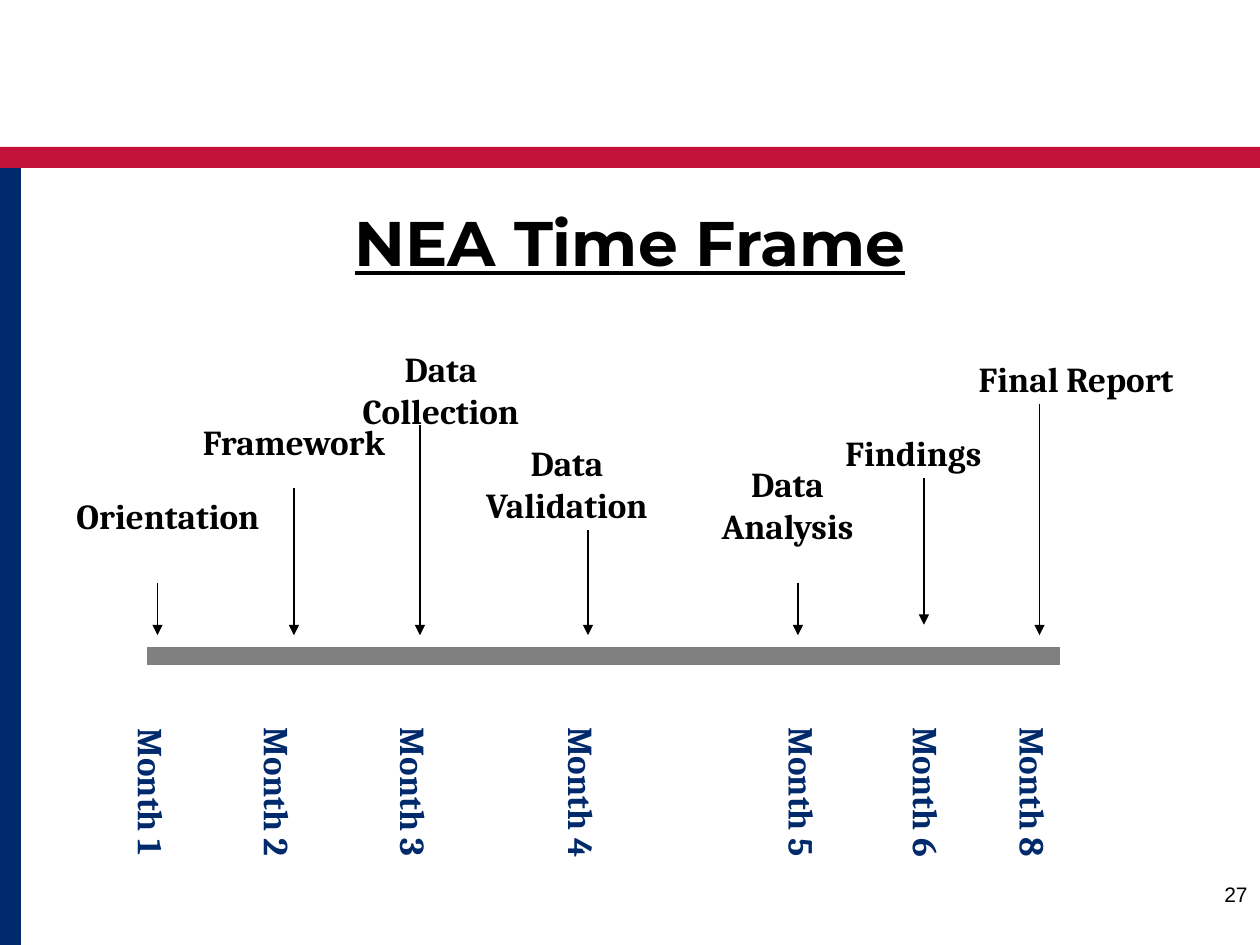
import pptx
import pptx.util
import pptx.dml.color
import pptx.enum.shapes
import pptx.enum.text
import pptx.oxml.ns
from lxml import etree

Pt = pptx.util.Pt
RGB = pptx.dml.color.RGBColor.from_string
ALIGN = pptx.enum.text.PP_ALIGN
COLORS = {"red": "C2113A", "navy": "002A6C", "gray": "808080", "black": "000000"}

deck = pptx.Presentation()
deck.slide_width, deck.slide_height = Pt(720), Pt(540)
slide = deck.slides.add_slide(deck.slide_layouts[5])
shapes = slide.shapes


def write(box, text, size, face, color="black", bold=True, align=ALIGN.CENTER):
    """Fill a text shape with one formatted paragraph."""
    frame = box.text_frame
    frame.word_wrap = True
    frame.text = text
    para = frame.paragraphs[0]
    para.alignment = align
    font = para.runs[0].font
    font.size, font.name, font.bold = Pt(size), face, bold
    font.color.rgb = RGB(COLORS[color])
    return font


def rule(x1, y1, x2, y2, width, color):
    """Draw a straight line without a shadow and return its a:ln element."""
    line = shapes.add_connector(
        pptx.enum.shapes.MSO_CONNECTOR.STRAIGHT, Pt(x1), Pt(y1), Pt(x2), Pt(y2))
    line.line.width = Pt(width)
    line.line.color.rgb = RGB(COLORS[color])
    props = line._element.spPr
    etree.SubElement(props, pptx.oxml.ns.qn("a:effectLst"))
    return props.find(pptx.oxml.ns.qn("a:ln"))


# Page bands
for x, y, w, h, color in [(0, 84, 720, 12, "red"), (0, 96, 12, 444, "navy")]:
    band = shapes.add_shape(
        pptx.enum.shapes.MSO_SHAPE.RECTANGLE, Pt(x), Pt(y), Pt(w), Pt(h))
    band.shadow.inherit = False
    band.fill.solid()
    band.fill.fore_color.rgb = RGB(COLORS[color])
    band.line.fill.background()

# Title and page number
title = shapes.title
title.left, title.top, title.width, title.height = Pt(54), Pt(114), Pt(612), Pt(48)
title.text_frame.vertical_anchor = pptx.enum.text.MSO_ANCHOR.MIDDLE
write(title, "NEA Time Frame", 36, "Montserrat").underline = True

page = shapes.add_textbox(Pt(552), Pt(500.4), Pt(168), Pt(28.8))
write(page, "27", 12, "Arial", bold=False, align=ALIGN.RIGHT)

# Time line
rule(84, 375, 606, 375, 10, "gray")

# Month, its centre, step, label left, top and width, arrow x, top and end
steps = [
    (1, 86.6, "Orientation", 36, 279, 120, 90, 333, 363),
    (2, 158.6, "Framework", 108, 237, 120, 168, 279, 363),
    (3, 236.5, "Data Collection", 192, 195, 120, 240, 243, 363),
    (4, 332.5, "Data Validation", 264, 249, 120, 336, 303, 363),
    (5, 458.5, "Data Analysis", 390, 261, 120, 456, 333, 363),
    (6, 529.5, "Findings", 462, 243, 120, 528, 273, 357),
    (8, 590.5, "Final Report", 546, 201, 138, 594, 231, 363),
]
for month, mid, step, left, top, wide, x, start, end in steps:
    tag = shapes.add_textbox(Pt(mid - 60), Pt(437), Pt(120), Pt(31.5))
    tag.rotation = 90
    write(tag, f"Month {month}", 20, "Cambria", "navy")

    high = 55.5 if step.startswith("Data") else 31.5
    label = shapes.add_textbox(Pt(left), Pt(top), Pt(wide), Pt(high))
    write(label, step, 20, "Cambria")

    stroke = rule(x, start, x, end, 0.75, "black")
    etree.SubElement(stroke, pptx.oxml.ns.qn("a:tailEnd"), type="triangle")

deck.save("out.pptx")
